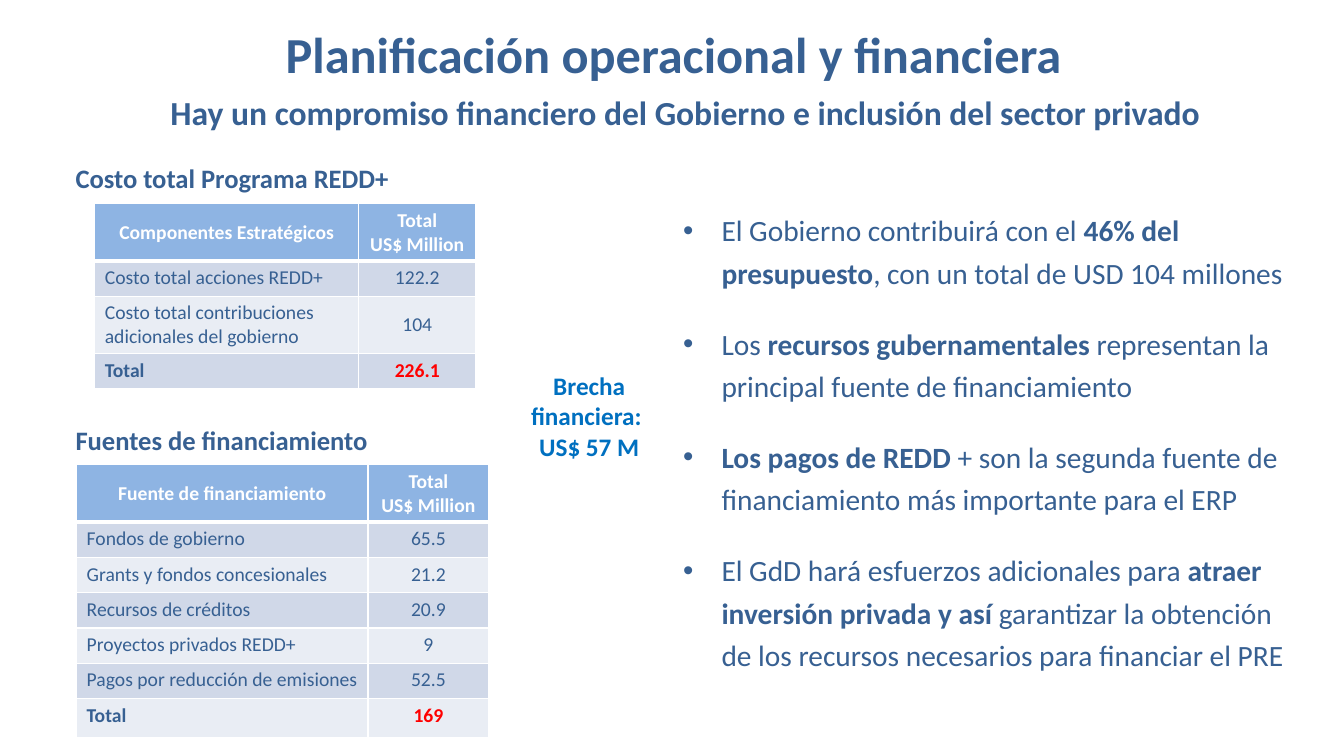
from lxml import etree
from pptx import Presentation, util as u
from pptx.dml.color import RGBColor
from pptx.enum import shapes, text
from pptx.oxml import ns

NAVY = RGBColor(0x37, 0x60, 0x92)
BLUE = RGBColor(0x00, 0x70, 0xC0)
SKY = RGBColor(0x8E, 0xB4, 0xE3)
RED = RGBColor(0xFF, 0x00, 0x00)
WHITE = RGBColor(0xFF, 0xFF, 0xFF)
BANDS = (RGBColor(0xD0, 0xD8, 0xE8), RGBColor(0xE9, 0xED, 0xF4))
LEFT, MID = text.PP_ALIGN.LEFT, text.PP_ALIGN.CENTER
TOP, HALF, LOW = text.MSO_ANCHOR.TOP, text.MSO_ANCHOR.MIDDLE, text.MSO_ANCHOR.BOTTOM
TALL, ROW, LAST = 7.6, 4.67, 5.2
UNIT = "Total\nUS$ Million"

COSTS = [
    ("Componentes Estratégicos", UNIT, TALL),
    ("Costo total acciones REDD+", "122.2", ROW),
    ("Costo total contribuciones adicionales del gobierno", "104", TALL),
    ("Total", "226.1", ROW),
]
FUNDS = [
    ("Fuente de financiamiento", UNIT, TALL),
    ("Fondos de gobierno", "65.5", ROW),
    ("Grants y fondos concesionales", "21.2", ROW),
    ("Recursos de créditos", "20.9", ROW),
    ("Proyectos privados REDD+", "9", ROW),
    ("Pagos por reducción de emisiones", "52.5", ROW),
    ("Total", "169", LAST),
]
POINTS = [
    "El Gobierno contribuirá con el *46% del presupuesto*, con un total de USD 104 millones",
    "Los *recursos gubernamentales *representan la principal fuente de financiamiento",
    "*Los pagos de REDD *+ son la segunda fuente de financiamiento más importante para el ERP",
    "El GdD hará esfuerzos adicionales para *atraer inversión privada y así *"
    "garantizar la obtención de los recursos necesarios para financiar el PRE",
]


class Deck:
    def __init__(self, face):
        self.face = face
        self.show = Presentation()
        self.show.slide_width = u.Inches(13.33)
        self.show.slide_height = u.Inches(7.5)
        self.slide = self.show.slides.add_slide(self.show.slide_layouts[6])

    def wide(self, share):
        return round(self.show.slide_width * share / 100)

    def high(self, share):
        return round(self.show.slide_height * share / 100)

    def area(self, x, y, w, h):
        return self.wide(x), self.high(y), self.wide(w), self.high(h)

    def style(self, run, size, color, bold):
        font = run.font
        font.name, font.size, font.bold = self.face, u.Pt(size), bold
        font.color.rgb = color

    def fill_in(self, frame, words, size, color, bold=True, align=LEFT):
        frame.text = words
        for para in frame.paragraphs:
            para.alignment = align
            for run in para.runs:
                self.style(run, size, color, bold)

    def label(self, area, words, size, align=LEFT, anchor=TOP):
        frame = self.slide.shapes.add_textbox(*self.area(*area)).text_frame
        frame.word_wrap = True
        frame.vertical_anchor = anchor
        self.fill_in(frame, words, size, NAVY, align=align)

    def callout(self, area, words, size):
        box = self.slide.shapes.add_shape(
            shapes.MSO_SHAPE.ROUNDED_RECTANGLE, *self.area(*area))
        box.shadow.inherit = False
        box.fill.background()
        box.line.fill.background()
        box.text_frame.vertical_anchor = HALF
        self.fill_in(box.text_frame, words, size, BLUE, align=MID)

    def bullets(self, area, points, size):
        frame = self.slide.shapes.add_textbox(*self.area(*area)).text_frame
        frame.word_wrap = True
        for n, point in enumerate(points):
            para = frame.add_paragraph() if n else frame.paragraphs[0]
            props = para._p.get_or_add_pPr()
            props.set("marL", str(u.Inches(0.38)))
            props.set("indent", str(-u.Inches(0.38)))
            etree.SubElement(props, ns.qn("a:buFont")).set("typeface", "Arial")
            etree.SubElement(props, ns.qn("a:buChar")).set("char", "•")
            para.line_spacing = 1.2
            para.space_before = u.Pt(20.5 if n else 0)
            for k, part in enumerate(point.split("*")):
                if part:
                    run = para.add_run()
                    run.text = part
                    self.style(run, size, NAVY, k % 2 == 1)

    def border(self, cell, row):
        props = cell._tc.get_or_add_tcPr()
        for side in "LRTB":
            thick = (side, row) in (("B", 0), ("T", 1))
            line = etree.SubElement(props, ns.qn("a:ln" + side))
            line.set("w", str(u.Pt(3 if thick else 1)))
            fill = etree.SubElement(line, ns.qn("a:solidFill"))
            etree.SubElement(fill, ns.qn("a:srgbClr")).set("val", str(WHITE))

    def table(self, x, y, cols, rows):
        area = self.area(x, y, sum(cols), sum(row[2] for row in rows))
        grid = self.slide.shapes.add_table(len(rows), len(cols), *area).table
        for c, width in enumerate(cols):
            grid.columns[c].width = self.wide(width)
        for r, (*words, height) in enumerate(rows):
            grid.rows[r].height = self.high(height)
            head, total = r == 0, r == len(rows) - 1
            for c, word in enumerate(words):
                cell = grid.cell(r, c)
                self.border(cell, r)
                cell.fill.solid()
                cell.fill.fore_color.rgb = SKY if head else BANDS[(r - 1) % 2]
                cell.vertical_anchor = HALF if height == TALL else TOP
                color = WHITE if head else RED if total and c else NAVY
                self.fill_in(cell.text_frame, word, 14, color, head or total,
                             MID if head or c else LEFT)


def main():
    deck = Deck("Calibri")
    deck.label((2.33, 2.67, 95.63, 8.8),
               "Planificación operacional y financiera", 36, MID, HALF)
    deck.label((7.95, 11.47, 86.1, 6.67),
               "Hay un compromiso financiero del Gobierno e inclusión del sector privado",
               24, MID)
    deck.label((4.88, 20.8, 36.3, 4.8), "Costo total Programa REDD+", 19)
    deck.table(7.05, 26.93, (19.65, 8.7), COSTS)
    deck.label((4.88, 56.13, 44.18, 4.8), "Fuentes de financiamiento", 19, anchor=LOW)
    deck.table(5.7, 61.47, (21.68, 9), FUNDS)
    deck.callout((36.53, 46.13, 14.63, 17.73), "Brecha\nfinanciera: \nUS$ 57 M", 18)
    deck.bullets((50.1, 26.53, 47.18, 68.8), POINTS, 21)
    deck.show.save("out.pptx")


if __name__ == "__main__":
    main()
